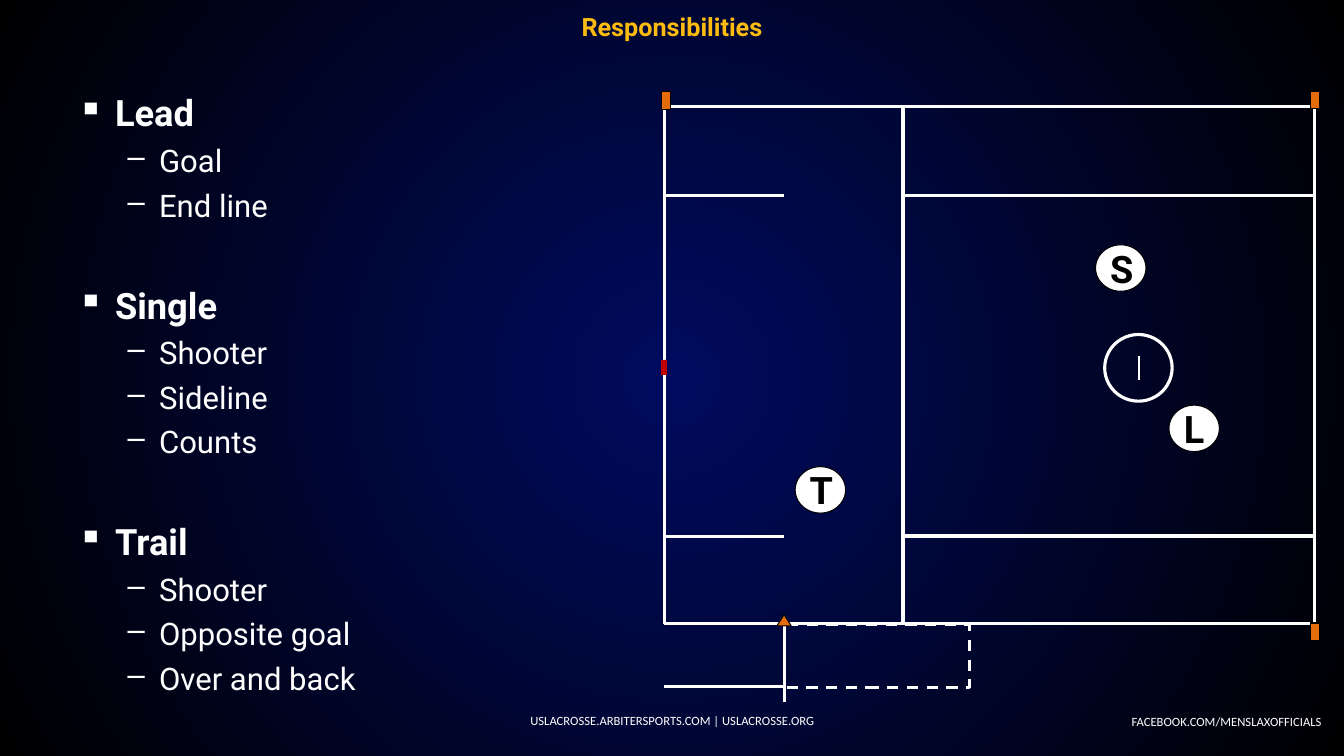
import pptx
import pptx.util
import pptx.dml.color
import pptx.enum.dml
import pptx.enum.shapes
import pptx.enum.text
import pptx.oxml
import pptx.oxml.ns
import lxml.etree

Cm, Pt = pptx.util.Cm, pptx.util.Pt
Kind = pptx.enum.shapes.MSO_SHAPE
Align = pptx.enum.text.PP_ALIGN
Middle = pptx.enum.text.MSO_ANCHOR.MIDDLE
qn = pptx.oxml.ns.qn

WHITE, BLACK, GOLD, ORANGE, RED, NAVY = (
    "FFFFFF", "000000", "FEBC11", "E46C0A", "C00000", "000B5F")

title = "Responsibilities"
roles = {
    "Lead": ["Goal", "End line"],
    "Single": ["Shooter", "Sideline", "Counts"],
    "Trail": ["Shooter", "Opposite goal", "Over and back"],
}
marks = [("L", 29.46, 10.21), ("S", 27.61, 6.17), ("T", 20.04, 11.76)]
notes = [
    ("FACEBOOK.COM/MENSLAXOFFICIALS", (28.17, 17.86, 5.38, 0.64), Align.RIGHT, False),
    ("USLACROSSE.ARBITERSPORTS.COM | USLACROSSE.ORG",
     (11.58, 17.65, 10.72, 1.02), Align.CENTER, True),
]

left, mid, right = 16.74, 22.76, 33.12
top, upper, lower, base = 2.69, 4.93, 13.51, 15.72
wing, bench = 19.76, 17.3
goal = 28.7

zones = [(left, top, mid, base)] + [
    (mid, y, right, end) for y, end in ((top, upper), (lower, base), (upper, lower))]
lines = [(left, y, wing, y, 2.25) for y in (upper, lower, bench)] + [
    (wing, 17.7, wing, base, 2.25), (goal, 9.58, goal, 8.97, 1.5)]
flags = [(33.02, 2.31, 0.23, 0.43), (33.02, 15.7, 0.23, 0.43), (16.66, 2.31, 0.25, 0.46)]


def color(text):
    return pptx.dml.color.RGBColor.from_string(text)


def style(run, size, tint, bold=False, face="Roboto"):
    run.font.size, run.font.bold, run.font.name = Pt(size), bold, face
    run.font.color.rgb = color(tint)


def shape(kind, box, fill=None, line=None, width=0.75):
    item = slide.shapes.add_shape(kind, *map(Cm, box))
    item.shadow.inherit = False
    if fill:
        item.fill.solid()
        item.fill.fore_color.rgb = color(fill)
    else:
        item.fill.background()
    if line:
        item.line.color.rgb = color(line)
        item.line.width = Pt(width)
    else:
        item.line.fill.background()
    return item


def bullet(para, sign, margin, indent):
    props = para._p.get_or_add_pPr()
    props.set("marL", str(Cm(margin)))
    props.set("indent", str(-Cm(indent)))
    lxml.etree.SubElement(props, qn("a:buChar")).set("char", sign)


def paint():
    fill = slide.background.fill
    fill.gradient()
    for stop, tint in zip(fill.gradient_stops, (NAVY, BLACK)):
        stop.color.rgb = color(tint)
    grad = slide.element.find(".//" + qn("a:gradFill"))
    for old in grad.findall(qn("a:lin")):
        grad.remove(old)
    ring = lxml.etree.SubElement(grad, qn("a:path"))
    ring.set("path", "circle")
    focus = lxml.etree.SubElement(ring, qn("a:fillToRect"))
    for side in "ltrb":
        focus.set(side, "50000")


def field():
    for x, y, end, foot in zones:
        shape(Kind.RECTANGLE, (x, y, end - x, foot - y), line=WHITE, width=2.25)
    area = shape(Kind.RECTANGLE, (wing, 15.75, 4.67, 1.57), line=WHITE, width=2)
    area.line.dash_style = pptx.enum.dml.MSO_LINE.DASH
    shape(Kind.OVAL, (27.84, 8.43, 1.7, 1.68), line=WHITE, width=2.25)
    for x, y, end, foot, width in lines:
        link = slide.shapes.add_connector(
            pptx.enum.shapes.MSO_CONNECTOR.STRAIGHT, *map(Cm, (x, y, end, foot)))
        link.line.color.rgb = color(WHITE)
        link.line.width = Pt(width)
        lxml.etree.SubElement(link._element.spPr, qn("a:effectLst"))
    shape(Kind.ISOSCELES_TRIANGLE, (wing - 0.18, 15.49, 0.36, 0.28), ORANGE, BLACK)
    for flag in flags:
        shape(Kind.RECTANGLE, flag, ORANGE, BLACK)
    shape(Kind.RECTANGLE, (16.66, 9.07, 0.15, 0.38), RED)


def duties():
    frame = slide.shapes.add_textbox(*map(Cm, (1.7, 2.16, 14.12, 14.55))).text_frame
    frame.word_wrap = True
    rows = [(text, not n) for role, tasks in roles.items()
            for n, text in enumerate([role] + tasks)]
    for n, (text, head) in enumerate(rows):
        para = frame.add_paragraph() if n else frame.paragraphs[0]
        para.text = text
        para.level = 0 if head else 1
        if n:
            para.space_before = Pt(42.5 if head else 5.2)
        bullet(para, *(("▪", 0.95, 0.95) if head else ("–", 2.06, 0.79)))
        style(para.runs[0], 25.9 if head else 22.2, WHITE, head)


def labels():
    for text, x, y in marks:
        frame = shape(Kind.OVAL, (x, y, 1.27, 1.17), WHITE, BLACK).text_frame
        frame.margin_left = frame.margin_right = Cm(0.18)
        frame.margin_top = frame.margin_bottom = Cm(0.18)
        frame.vertical_anchor = Middle
        frame.text = text
        frame.paragraphs[0].alignment = Align.CENTER
        style(frame.paragraphs[0].runs[0], 27, BLACK, True)
    for text, box, align, wrap in notes:
        frame = slide.shapes.add_textbox(*map(Cm, box)).text_frame
        frame.word_wrap = wrap
        frame.vertical_anchor = Middle
        frame.text = text
        frame.paragraphs[0].alignment = align
        style(frame.paragraphs[0].runs[0], 9, WHITE, face="Calibri")


def heading():
    item = slide.shapes.title
    item.left, item.top, item.width, item.height = map(Cm, (0, 0.13, 33.87, 1.07))
    frame = item.text_frame
    frame.text = title
    frame.vertical_anchor = Middle
    frame.paragraphs[0].alignment = Align.CENTER
    style(frame.paragraphs[0].runs[0], 18, GOLD, True)


deck = pptx.Presentation()
deck.slide_width, deck.slide_height = Cm(33.87), Cm(19.05)
slide = deck.slides.add_slide(deck.slide_layouts[5])
paint()
field()
heading()
duties()
labels()
deck.save("out.pptx")
